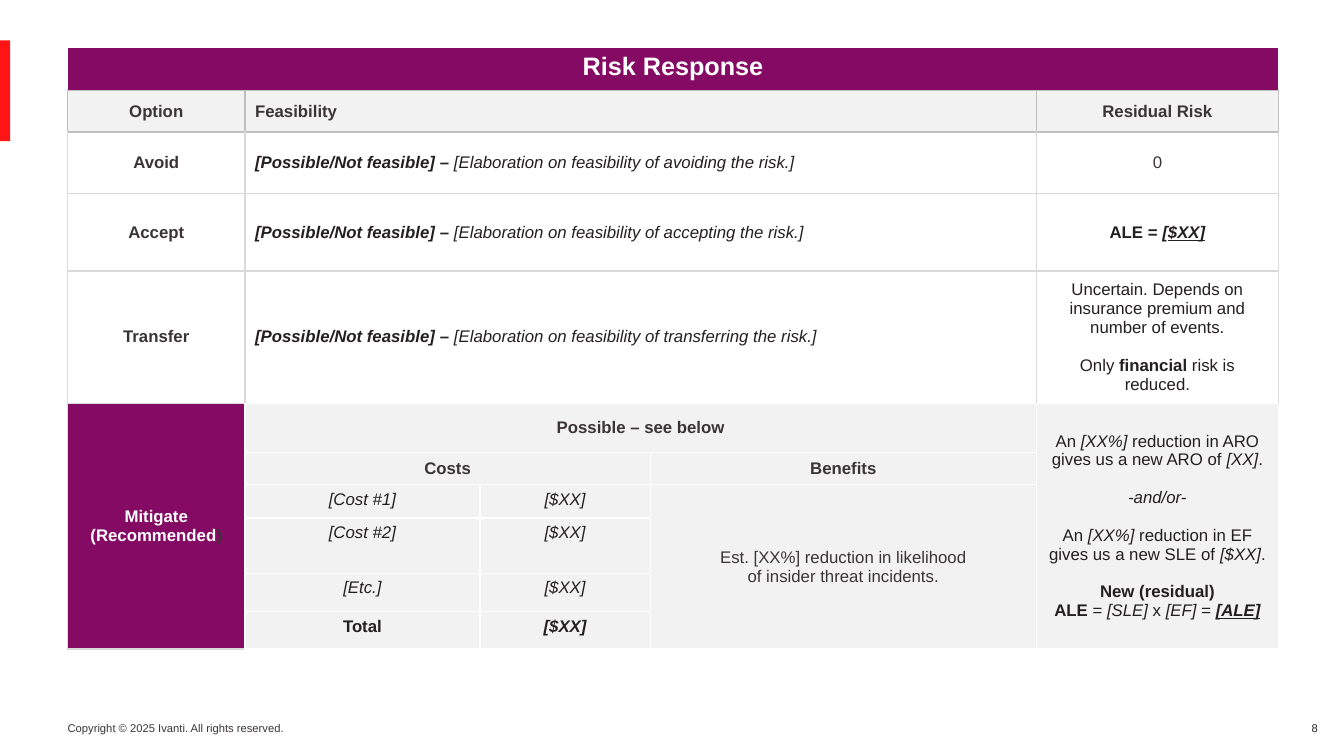
"""Build the risk response slide: an options table with a cost and benefit breakdown."""
from dataclasses import dataclass
from itertools import product
from typing import Any, NamedTuple

from lxml import etree
from pptx import Presentation
from pptx import util as u
from pptx.dml.color import RGBColor
from pptx.enum import shapes, text
from pptx.oxml import ns


@dataclass(frozen=True)
class Theme:
    font: str = "Arial"
    purple: str = "850A64"
    red: str = "FF1515"
    white: str = "FFFFFF"
    panel: str = "F2F2F2"
    heading: str = "3B3436"
    body: str = "231F20"
    header_line: str = "BFBFBF"
    row_line: str = "D9D9D9"
    title_size: float = 18
    table_size: float = 12
    footer_size: float = 8
    paragraph_gap: float = 13.5


THEME = Theme()
LEFT, CENTER, RIGHT = text.PP_ALIGN.LEFT, text.PP_ALIGN.CENTER, text.PP_ALIGN.RIGHT
TOP, MIDDLE = text.MSO_ANCHOR.TOP, text.MSO_ANCHOR.MIDDLE
COLUMN_WIDTHS = (1.76, 2.33, 1.69, 3.83, 2.4)
ROW_HEIGHTS = (0.43, 0.41, 0.61, 0.77, 1.31, 0.49, 0.32, 0.33, 0.55, 0.38, 0.37)


class Run(NamedTuple):
    text: str
    style: str = ""
    color: str | None = None


class Borders(NamedTuple):
    left: str = THEME.white
    right: str = THEME.white
    top: str = THEME.white
    bottom: str = THEME.white


HEADER_BORDERS = Borders(*[THEME.header_line] * 4)
ROW_BORDERS = Borders(*[THEME.row_line] * 4)


@dataclass(frozen=True)
class CellSpec:
    row: int
    column: int
    paragraphs: list[list[Run]]
    fill: str = THEME.panel
    color: str = THEME.heading
    align: Any = CENTER
    anchor: Any = MIDDLE
    rows: int = 1
    columns: int = 1
    size: float = THEME.table_size
    borders: Borders = Borders()


class FooterText(NamedTuple):
    text: str
    left: float
    width: float
    align: Any
    color: str


FOOTERS = (
    FooterText("Copyright © 2025 Ivanti. All rights reserved.", 0.67, 2.28, LEFT, THEME.heading),
    FooterText("8", 12.69, 0.48, RIGHT, THEME.body),
)


def apply_format(target: Any, values: dict[str, Any]) -> None:
    for name, value in values.items():
        setattr(target, name, value)


def write_run(paragraph: Any, run: Run, size: float, color: str) -> None:
    for index, line in enumerate(run.text.split("\n")):
        if index:
            paragraph.add_line_break()
        piece = paragraph.add_run()
        piece.text = line
        apply_format(piece.font, {
            "name": THEME.font, "size": u.Pt(size), "bold": "b" in run.style,
            "italic": "i" in run.style, "underline": "u" in run.style,
        })
        piece.font.color.rgb = RGBColor.from_string(run.color or color)


def write_text(frame: Any, paragraphs: list[list[Run]], size: float, color: str, align: Any) -> None:
    for index, runs in enumerate(paragraphs):
        paragraph = frame.add_paragraph() if index else frame.paragraphs[0]
        paragraph.alignment = align
        if index:
            paragraph.space_before = u.Pt(THEME.paragraph_gap)
        for run in runs:
            write_run(paragraph, run, size, color)


def set_borders(cell: Any, borders: Borders) -> None:
    properties = cell._tc.get_or_add_tcPr()
    for tag, color in zip(("a:lnL", "a:lnR", "a:lnT", "a:lnB"), borders):
        line = etree.SubElement(properties, ns.qn(tag), w=str(u.Pt(1)))
        solid = etree.SubElement(line, ns.qn("a:solidFill"))
        etree.SubElement(solid, ns.qn("a:srgbClr"), val=color)


def draw_cell(table: Any, spec: CellSpec) -> None:
    last_row, last_column = spec.row + spec.rows - 1, spec.column + spec.columns - 1
    cell = table.cell(spec.row, spec.column)
    if spec.rows * spec.columns > 1:
        cell.merge(table.cell(last_row, last_column))
    for row, column in product(range(spec.row, last_row + 1), range(spec.column, last_column + 1)):
        part = table.cell(row, column)
        set_borders(part, spec.borders)
        part.fill.solid()
        part.fill.fore_color.rgb = RGBColor.from_string(spec.fill)
    cell.vertical_anchor = spec.anchor
    write_text(cell.text_frame, spec.paragraphs, spec.size, spec.color, spec.align)


def header_cells() -> list[CellSpec]:
    title = CellSpec(0, 0, [[Run("Risk Response", "b")]], THEME.purple, THEME.white, anchor=TOP,
                     columns=5, size=THEME.title_size, borders=Borders(bottom=THEME.header_line))
    headings = (("Option", 0, 1, CENTER), ("Feasibility", 1, 3, LEFT), ("Residual Risk", 4, 1, CENTER))
    return [title] + [
        CellSpec(1, column, [[Run(label, "b")]], align=align, columns=span, borders=HEADER_BORDERS)
        for label, column, span, align in headings
    ]


def option_cells() -> list[CellSpec]:
    options = (
        ("Avoid", "avoiding", [[Run("0", color=THEME.heading)]]),
        ("Accept", "accepting", [[Run("ALE = ", "b"), Run("[", "bi"), Run("$XX]", "biu")]]),
        ("Transfer", "transferring", [
            [Run("Uncertain. Depends on insurance premium and number of events.")],
            [Run("Only "), Run("financial", "b"), Run(" risk is reduced.")],
        ]),
    )
    cells = []
    for row, (option, action, residual) in enumerate(options, start=2):
        label_borders = ROW_BORDERS._replace(top=THEME.header_line) if row == 2 else ROW_BORDERS
        borders = label_borders._replace(bottom=THEME.white) if row == 4 else label_borders
        feasibility = [Run("[Possible/Not feasible]", "bi"), Run(" – ", "b"),
                       Run(f"[Elaboration on feasibility of {action} the risk.]", "i")]
        cells += [
            CellSpec(row, 0, [[Run(option, "b")]], THEME.white, borders=label_borders),
            CellSpec(row, 1, [feasibility], THEME.white, THEME.body, LEFT, columns=3, borders=borders),
            CellSpec(row, 4, residual, THEME.white, THEME.body, borders=borders),
        ]
    return cells


def reduction(factor: str, measure: str, value: str) -> list[Run]:
    return [Run("An "), Run("[XX%]", "i"), Run(f" reduction in {factor} gives us a new {measure} of "),
            Run(value, "i"), Run(".")]


def mitigation_cells() -> list[CellSpec]:
    residual = [
        reduction("ARO", "ARO", "[XX]"),
        [Run("-and/or-", "i")],
        reduction("EF", "SLE", "[$XX]"),
        [Run("New (residual)\nALE", "b"), Run(" = "), Run("[SLE]", "i"), Run(" x "),
         Run("[EF]", "i"), Run(" = "), Run("[ALE]", "biu")],
    ]
    benefit = "Est. [XX%] reduction in likelihood\nof insider threat incidents."
    cells = [
        CellSpec(5, 0, [[Run("Mitigate (Recommended", "b"), Run(")", "b", THEME.heading)]],
                 THEME.purple, THEME.white, rows=6, borders=ROW_BORDERS._replace(right=THEME.white)),
        CellSpec(5, 1, [[Run("Possible – see below", "b")]], columns=3),
        CellSpec(5, 4, residual, color=THEME.body, rows=6),
        CellSpec(6, 1, [[Run("Costs", "b")]], columns=2),
        CellSpec(6, 3, [[Run("Benefits", "b")]]),
        CellSpec(7, 3, [[Run(benefit)]], rows=4),
    ]
    costs = (("[Cost #1]", "i", "i"), ("[Cost #2]", "i", "i"), ("[Etc.]", "i", "i"), ("Total", "b", "bi"))
    for row, (label, label_style, amount_style) in enumerate(costs, start=7):
        for column, run in enumerate((Run(label, label_style), Run("[$XX]", amount_style)), start=1):
            cells.append(CellSpec(row, column, [[run]], color=THEME.body, anchor=TOP))
    return cells


def draw_risk_table(slide: Any) -> None:
    frame = slide.shapes.add_table(len(ROW_HEIGHTS), len(COLUMN_WIDTHS), u.Inches(0.67), u.Inches(0.47),
                                   u.Inches(sum(COLUMN_WIDTHS)), u.Inches(sum(ROW_HEIGHTS)))
    table = frame.table
    apply_format(table, {"first_row": False, "horz_banding": False})
    for column, width in zip(table.columns, COLUMN_WIDTHS):
        column.width = u.Inches(width)
    for row, height in zip(table.rows, ROW_HEIGHTS):
        row.height = u.Inches(height)
    for spec in header_cells() + option_cells() + mitigation_cells():
        draw_cell(table, spec)


def draw_accent(slide: Any) -> None:
    accent = slide.shapes.add_shape(shapes.MSO_SHAPE.RECTANGLE, 0, u.Inches(0.4), u.Inches(0.1), u.Inches(1))
    accent.shadow.inherit = False
    accent.fill.solid()
    accent.fill.fore_color.rgb = RGBColor.from_string(THEME.red)
    accent.line.fill.background()


def draw_footer(slide: Any, footer: FooterText) -> None:
    box = slide.shapes.add_textbox(u.Inches(footer.left), u.Inches(7.11), u.Inches(footer.width), u.Inches(0.24))
    apply_format(box.text_frame, {"margin_left": 0, "word_wrap": footer.align == RIGHT})
    write_text(box.text_frame, [[Run(footer.text)]], THEME.footer_size, footer.color, footer.align)


def main() -> None:
    presentation = Presentation()
    apply_format(presentation, {"slide_width": u.Inches(13.33), "slide_height": u.Inches(7.5)})
    slide = presentation.slides.add_slide(presentation.slide_layouts[6])
    draw_accent(slide)
    draw_risk_table(slide)
    for footer in FOOTERS:
        draw_footer(slide, footer)
    presentation.save("out.pptx")


if __name__ == "__main__":
    main()
